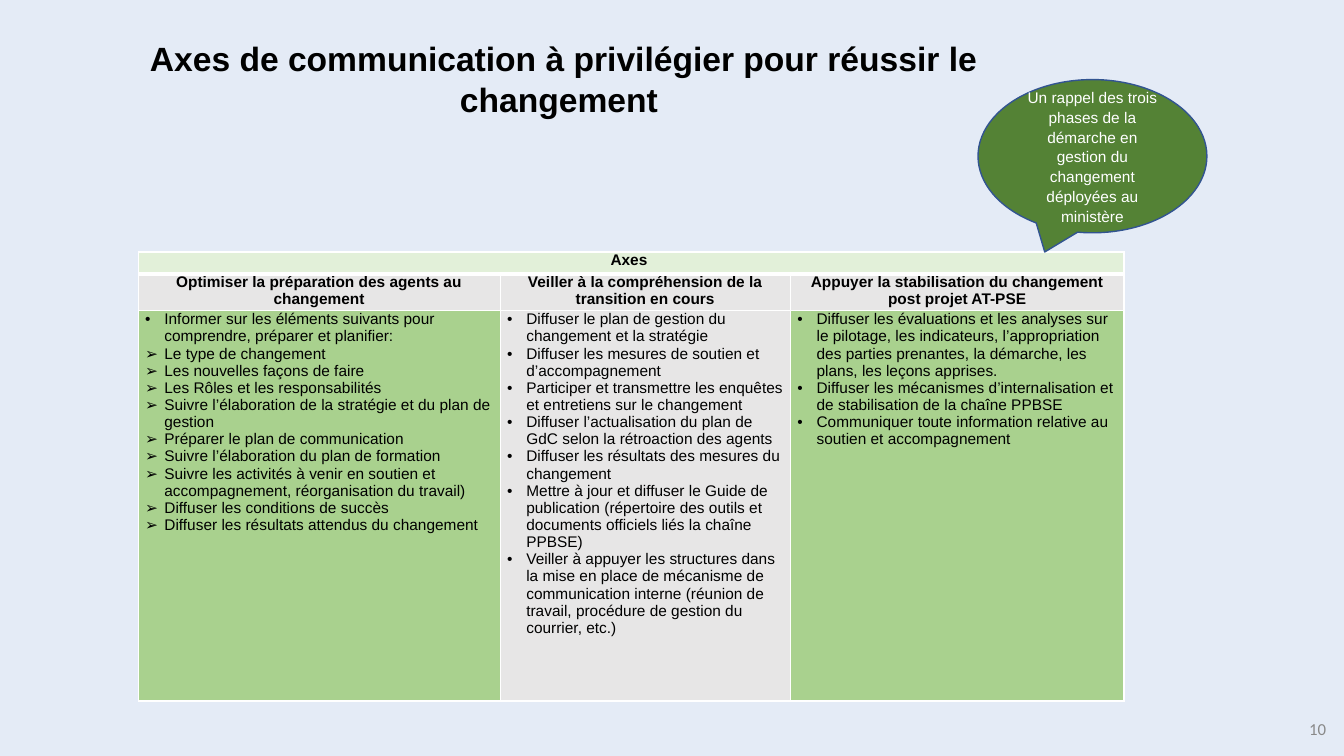
from lxml.etree import SubElement
from pptx import Presentation
from pptx.dml.color import RGBColor as Rgb
from pptx.enum.shapes import MSO_SHAPE as Preset
from pptx.enum.text import MSO_ANCHOR as Anchor, PP_ALIGN as Align
from pptx.oxml.ns import qn
from pptx.util import Inches, Pt

COLORS = {
    "background": "E4EBF6",
    "black": "000000",
    "white": "FFFFFF",
    "number": "898989",
    "callout": "548235",
    "outline": "325491",
    "axes": "E2F0D9",
    "gray": "E7E6E6",
    "green": "A9D18E",
}
DOT, ARROW = "•", "➢"
PHASES = [
    ("Optimiser la préparation des agents au changement", "green", [
        (DOT, "Informer sur les éléments suivants pour comprendre, préparer et planifier:"),
        (ARROW, "Le type de changement"),
        (ARROW, "Les nouvelles façons de faire"),
        (ARROW, "Les Rôles et les responsabilités"),
        (ARROW, "Suivre l’élaboration de la stratégie et du plan de gestion"),
        (ARROW, "Préparer le plan de communication"),
        (ARROW, "Suivre l’élaboration du plan de formation"),
        (ARROW, "Suivre les activités à venir en soutien et accompagnement, réorganisation du travail)"),
        (ARROW, "Diffuser les conditions de succès"),
        (ARROW, "Diffuser les résultats attendus du changement"),
    ]),
    ("Veiller à la compréhension de la transition en cours", "gray", [
        (DOT, "Diffuser le plan de gestion du changement et la stratégie"),
        (DOT, "Diffuser les mesures de soutien et d’accompagnement"),
        (DOT, "Participer et transmettre les enquêtes et entretiens sur le changement"),
        (DOT, "Diffuser l’actualisation du plan de GdC selon la rétroaction des agents"),
        (DOT, "Diffuser les résultats des mesures du changement"),
        (DOT, "Mettre à jour et diffuser le Guide de publication (répertoire des outils et "
              "documents officiels liés la chaîne PPBSE)"),
        (DOT, "Veiller à appuyer les structures dans la mise en place de mécanisme de communication "
              "interne (réunion de travail, procédure de gestion du courrier, etc.)"),
    ]),
    ("Appuyer la stabilisation du changement post projet AT-PSE", "green", [
        (DOT, "Diffuser les évaluations et les analyses sur le pilotage, les indicateurs, l’appropriation "
              "des parties prenantes, la démarche, les plans, les leçons apprises."),
        (DOT, "Diffuser les mécanismes d’internalisation et de stabilisation de la chaîne PPBSE"),
        (DOT, "Communiquer toute information relative au soutien et accompagnement"),
    ]),
]


class SlideBuilder:
    def __init__(self, presentation):
        self.width = presentation.slide_width
        self.height = presentation.slide_height
        self.slide = presentation.slides.add_slide(presentation.slide_layouts[6])
        self.paint(self.slide.background.fill, "background")

    def across(self, percent):
        return int(self.width * percent / 100)

    def down(self, percent):
        return int(self.height * percent / 100)

    def place(self, left, top, width, height):
        return self.across(left), self.down(top), self.across(width), self.down(height)

    def paint(self, fill, color):
        fill.solid()
        fill.fore_color.rgb = Rgb.from_string(COLORS[color])

    def add_text(self, paragraph, text, size=11, color="black", bold=False, align=Align.CENTER, font="Arial"):
        paragraph.alignment = align
        run = paragraph.add_run()
        run.text = text
        run.font.name = font
        run.font.size = Pt(size)
        run.font.bold = bold
        run.font.color.rgb = Rgb.from_string(COLORS[color])

    def text_box(self, place, text, **style):
        frame = self.slide.shapes.add_textbox(*self.place(*place)).text_frame
        frame.word_wrap = True
        self.add_text(frame.paragraphs[0], text, **style)

    def callout(self, place, text):
        shape = self.slide.shapes.add_shape(Preset.OVAL_CALLOUT, *self.place(*place))
        shape.shadow.inherit = False
        self.paint(shape.fill, "callout")
        self.paint(shape.line.fill, "outline")
        shape.line.width = Pt(1)
        frame = shape.text_frame
        frame.word_wrap = True
        frame.vertical_anchor = Anchor.MIDDLE
        frame.paragraphs[0].line_spacing = 1.07
        self.add_text(frame.paragraphs[0], text, color="white")

    def cell(self, cell, fill, top=1, bottom=1):
        cell.margin_left = cell.margin_right = Inches(0.07)
        cell.margin_top = cell.margin_bottom = 0
        properties = cell._tc.get_or_add_tcPr()
        for side, width in (("L", 1), ("R", 1), ("T", top), ("B", bottom)):
            border = SubElement(properties, qn(f"a:ln{side}"), w=str(Pt(width)))
            solid = SubElement(border, qn("a:solidFill"))
            SubElement(solid, qn("a:srgbClr"), val=COLORS["white"])
        self.paint(cell.fill, fill)

    def bullets(self, frame, items):
        for index, (mark, text) in enumerate(items):
            paragraph = frame.add_paragraph() if index else frame.paragraphs[0]
            properties = paragraph._p.get_or_add_pPr()
            properties.set("marL", str(Inches(0.19)))
            properties.set("indent", str(Inches(-0.19)))
            SubElement(properties, qn("a:buFont"), typeface="Arial")
            SubElement(properties, qn("a:buChar"), char=mark)
            self.add_text(paragraph, text, align=Align.LEFT)

    def table(self, left, top, columns, rows, title, phases):
        place = self.place(left, top, sum(columns), sum(rows))
        table = self.slide.shapes.add_table(len(rows), len(columns), *place).table
        table.first_row = table.horz_banding = False
        for column, share in zip(table.columns, columns):
            column.width = self.across(share)
        for row, share in zip(table.rows, rows):
            row.height = self.down(share)
        for index, (heading, color, items) in enumerate(phases):
            banner, header, body = (table.cell(row, index) for row in range(3))
            self.cell(banner, "axes", bottom=3)
            self.cell(header, "gray", top=3)
            self.cell(body, color)
            self.add_text(header.text_frame.paragraphs[0], heading, bold=True)
            self.bullets(body.text_frame, items)
        table.cell(0, 0).merge(table.cell(0, len(columns) - 1))
        self.add_text(table.cell(0, 0).text_frame.paragraphs[0], title, bold=True)


def main():
    presentation = Presentation()
    presentation.slide_width = Inches(13.33)
    presentation.slide_height = Inches(7.5)
    builder = SlideBuilder(presentation)
    builder.text_box((93.17, 94.4, 6.23, 5.33), "10", size=12, color="number", align=Align.RIGHT, font="Calibri")
    builder.text_box((9.6, 4.4, 64.67, 12.13), "Axes de communication à privilégier pour réussir le changement ",
                     size=24, bold=True)
    builder.table(10.28, 33.33, (26.93, 21.6, 24.83), (2.9, 4.7, 51.6), "Axes ", PHASES)
    builder.callout((72.77, 10.53, 17.03, 20.27),
                    "Un rappel des trois phases de la démarche en gestion du changement déployées au ministère")
    presentation.save("out.pptx")


if __name__ == "__main__":
    main()
